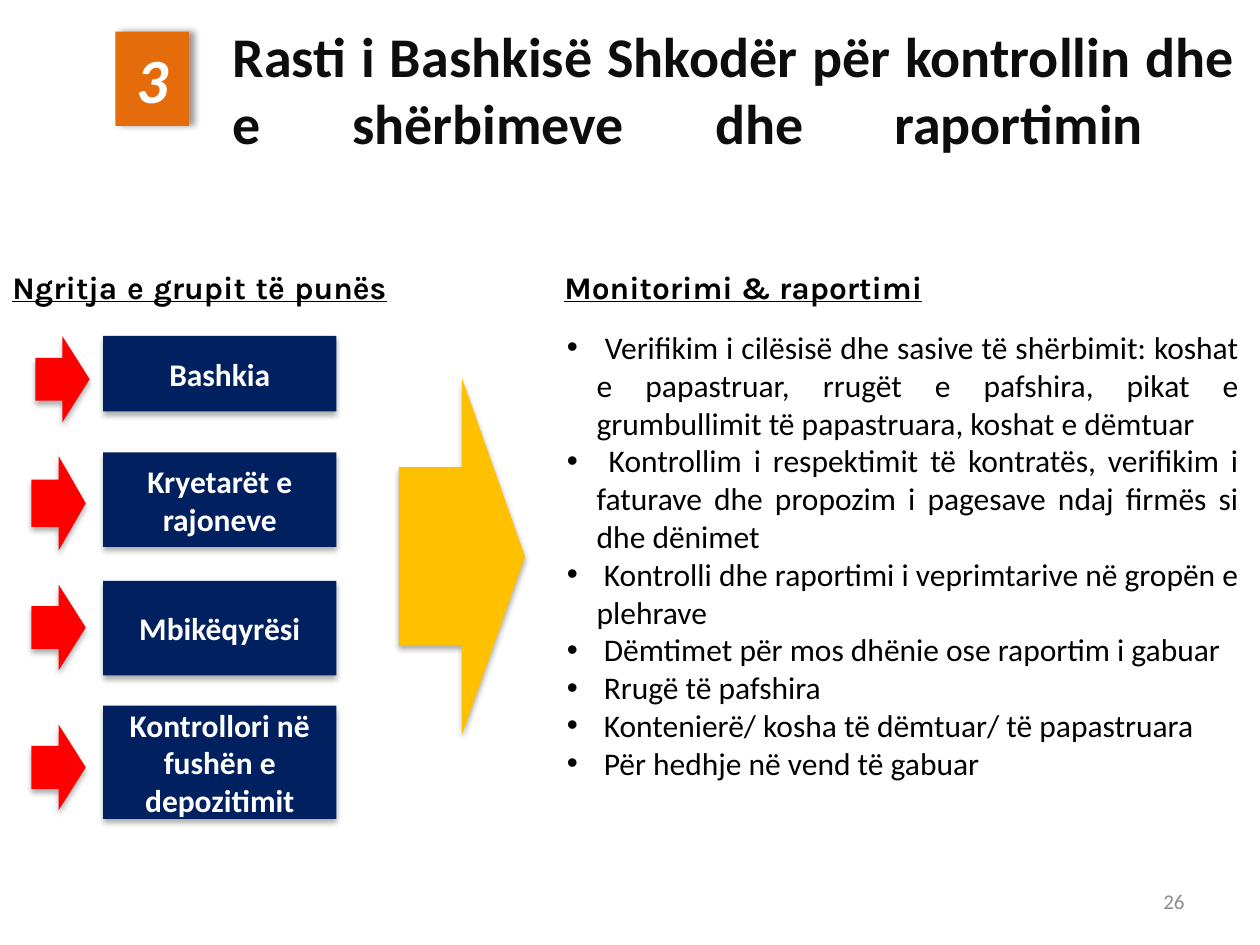
from lxml import etree
from pptx import Presentation
from pptx.dml.color import RGBColor
from pptx.enum.shapes import MSO_SHAPE
from pptx.enum.text import MSO_ANCHOR, PP_ALIGN
from pptx.oxml.ns import qn
from pptx.util import Pt

RECT, ARROW = MSO_SHAPE.RECTANGLE, MSO_SHAPE.RIGHT_ARROW
TOP, MIDDLE = MSO_ANCHOR.TOP, MSO_ANCHOR.MIDDLE
CENTER, RIGHT, JUSTIFY = PP_ALIGN.CENTER, PP_ALIGN.RIGHT, PP_ALIGN.JUSTIFY

COLORS = {
    "black": "000000", "title": "0D0D0D", "white": "FFFFFF", "grey": "8C8C8C",
    "orange": "E46C0A", "red": "FF0000", "navy": "002060", "gold": "FFC000",
}

# Shadows: opacity %, blur, distance, direction in degrees
SOFT = (32, 3.5, 2.2, 90)
BADGE = (40, 4, 3, 0)
TITLE = (40, 4, 4, 45)

# Team rows: label, box top, box height, arrow left, arrow top, arrow height
TEAM = [
    ("Bashkia", 192, 43.2, 20.2, 192.2, 49),
    ("Kryetarët e rajoneve", 258.5, 54, 18, 260.6, 54),
    ("Mbikëqyrësi", 331.9, 54, 18, 334.1, 49),
    ("Kontrollori në fushën e depozitimit", 403.2, 64.8, 18, 414, 49),
]

TASKS = [
    " Verifikim i cilësisë dhe sasive të shërbimit: koshat e papastruar, "
    "rrugët e pafshira, pikat e grumbullimit të papastruara, koshat e dëmtuar",
    " Kontrollim i respektimit të kontratës, verifikim i faturave dhe "
    "propozim i pagesave ndaj firmës si dhe dënimet",
    " Kontrolli dhe raportimi i veprimtarive në gropën e plehrave",
    " Dëmtimet për mos dhënie ose raportim i gabuar",
    " Rrugë të pafshira",
    " Kontenierë/ kosha të dëmtuar/ të papastruara",
    " Për hedhje në vend të gabuar",
]


def rgb(name):
    return RGBColor.from_string(COLORS[name])


def add_shadow(effects, opacity, blur, dist, angle):
    shadow = etree.SubElement(
        effects, qn("a:outerShdw"), blurRad=str(Pt(blur)), dist=str(Pt(dist)),
        dir=str(angle * 60000), algn="tl", rotWithShape="0")
    color = etree.SubElement(shadow, qn("a:srgbClr"), val=COLORS["black"])
    etree.SubElement(color, qn("a:alpha"), val=str(opacity * 1000))


def add_run(p, text, size, color, font="Calibri", bold=False, italic=False,
            underline=False):
    r = p.add_run()
    r.text = text
    r.font.size, r.font.name = Pt(size), font
    r.font.bold, r.font.italic, r.font.underline = bold, italic, underline
    r.font.color.rgb = rgb(color)
    return r


def add_block(shapes, kind, box, fill, shadow, label=None, size=18, italic=False):
    """Filled shape with a shadow and an optional centred label."""
    sp = shapes.add_shape(kind, *map(Pt, box))
    sp.fill.solid()
    sp.fill.fore_color.rgb = rgb(fill)
    sp.line.fill.background()
    sp.shadow.inherit = False
    add_shadow(sp._element.spPr.find(qn("a:effectLst")), *shadow)
    if label:
        tf = sp.text_frame
        tf.word_wrap, tf.vertical_anchor = True, MIDDLE
        p = tf.paragraphs[0]
        p.alignment = CENTER
        add_run(p, label, size, "white", bold=True, italic=italic)


def add_text(s, box, align, anchor=MIDDLE):
    """Empty wrapping text box; returns its frame and first paragraph."""
    tf = s.shapes.add_textbox(*map(Pt, box)).text_frame
    tf.word_wrap, tf.vertical_anchor = True, anchor
    p = tf.paragraphs[0]
    p.alignment = align
    return tf, p


def add_title(s, text):
    _, p = add_text(s, (126, 8.6, 586.8, 77.8), JUSTIFY, TOP)
    r = add_run(p, text, 32, "title", bold=True)
    effects = etree.Element(qn("a:effectLst"))
    r.font._element.find(qn("a:latin")).addprevious(effects)
    add_shadow(effects, *TITLE)
    p.add_line_break()  # stretches the last line as well


def add_heading(s, left, text):
    _, p = add_text(s, (left, 149.8, 228, 28.8), JUSTIFY)
    add_run(p, text, 18, "black", font="Karla", bold=True, underline=True)


def add_bullets(s, box, items):
    tf, p = add_text(s, box, JUSTIFY)
    tf.margin_left, tf.margin_top = Pt(18), Pt(18)
    tf.margin_right, tf.margin_bottom = Pt(0), Pt(12)
    for i, item in enumerate(items):
        if i:
            p = tf.add_paragraph()
            p.alignment = JUSTIFY
        pPr = p._p.get_or_add_pPr()
        pPr.set("marL", str(Pt(17)))
        pPr.set("indent", str(-Pt(17)))
        etree.SubElement(pPr, qn("a:buFont"), typeface="Arial")
        etree.SubElement(pPr, qn("a:buChar"), char="•")
        add_run(p, item, 18, "black")


def add_team(s):
    group = s.shapes.add_group_shape()
    for label, top, height, arrow_left, arrow_top, arrow_height in TEAM:
        add_block(group.shapes, ARROW, (arrow_left, arrow_top, 31, arrow_height),
                  "red", SOFT)
        add_block(group.shapes, RECT, (59, top, 133.2, height), "navy", SOFT, label)


def main():
    prs = Presentation()
    prs.slide_width, prs.slide_height = Pt(720), Pt(540)
    s = prs.slides.add_slide(prs.slide_layouts[6])

    # Title and section number
    add_title(s, "Rasti i Bashkisë Shkodër për kontrollin dhe e shërbimeve "
                 "dhe raportimin ")
    add_block(s.shapes, RECT, (66, 18, 42, 54), "orange", BADGE, "3", 36, True)

    # Left: the working group
    add_heading(s, 0, "Ngritja e grupit të punës ")
    add_team(s)

    # Right: monitoring and reporting
    add_bullets(s, (306, 168, 402, 292), TASKS)
    add_heading(s, 315.4, "Monitorimi & raportimi")
    add_block(s.shapes, ARROW, (228, 216, 72, 204), "gold", SOFT)

    # Page number
    _, p = add_text(s, (516, 500.5, 168, 28.8), RIGHT)
    add_run(p, "26", 12, "grey")

    prs.save("out.pptx")


if __name__ == "__main__":
    main()
